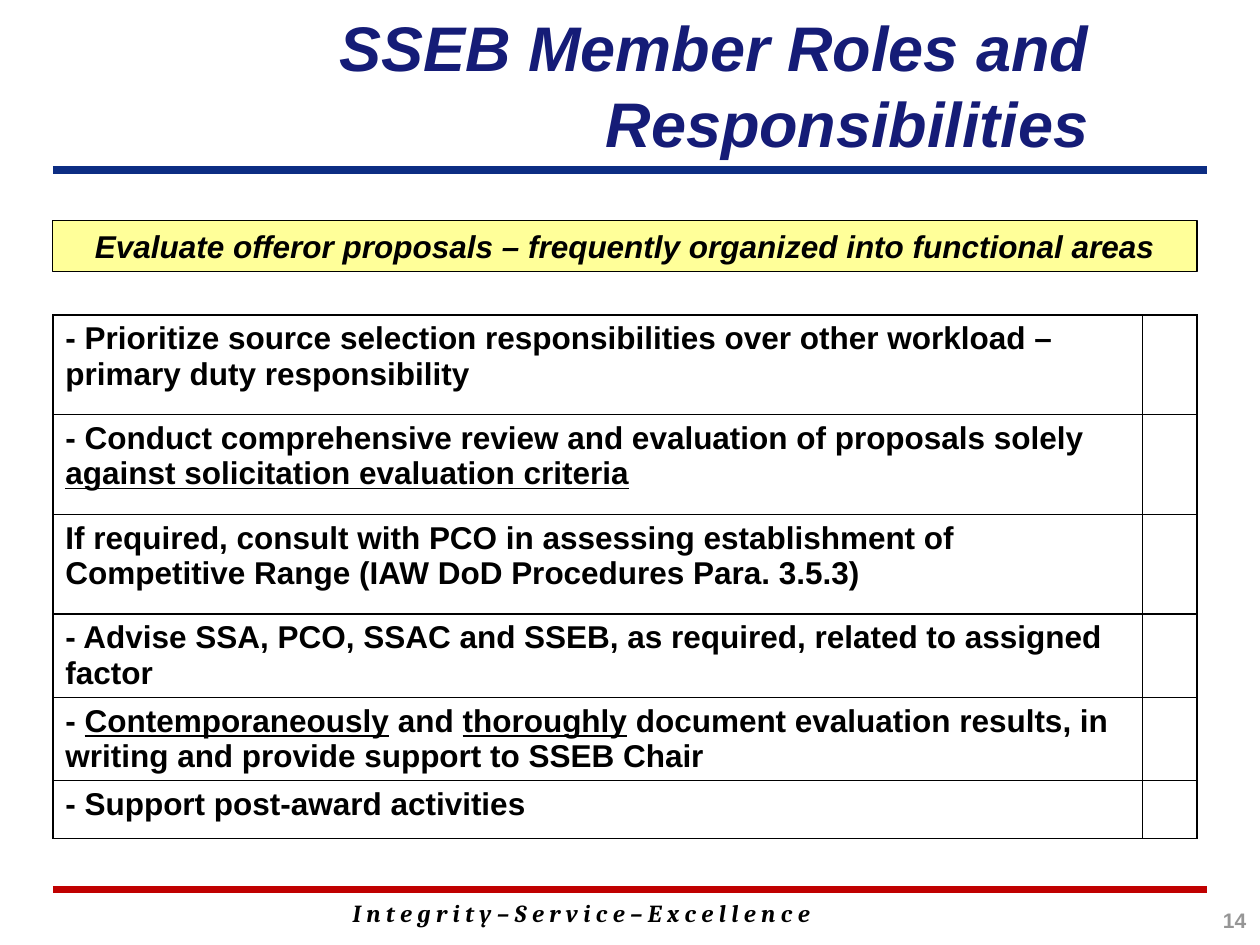
from lxml.etree import SubElement
from pptx import Presentation
from pptx.dml.color import RGBColor as RGB
from pptx.enum.shapes import MSO_CONNECTOR as CONN, MSO_SHAPE as SHAPE
from pptx.enum.text import MSO_ANCHOR as ANCHOR, MSO_AUTO_SIZE as FIT, PP_ALIGN as ALIGN
from pptx.oxml.ns import qn
from pptx.util import Pt

C = {"navy": "151C77", "blue": "0C2D83", "red": "C00000",
     "yellow": "FFFF99", "black": "000000", "gray": "969696"}
TITLE = "SSEB Member Roles and Responsibilities"
BANNER = "Evaluate offeror proposals – frequently organized into functional areas"
MOTTO = "I n t e g r i t y – S e r v i c e – E x c e l l e n c e"
NUMBER = "14"
DUTIES = [
    (57, ["- Prioritize source selection responsibilities over other workload – "
          "primary duty responsibility"]),
    (57, ["- Conduct comprehensive review and evaluation of proposals solely ",
          "against solicitation evaluation criteria"]),
    (57, ["If required, consult with PCO in assessing establishment of "
          "Competitive Range (IAW DoD Procedures Para. 3.5.3)"]),
    (33, ["- Advise SSA, PCO, SSAC and SSEB, as required, related to assigned factor"]),
    (33, ["- ", "Contemporaneously", " and ", "thoroughly",
          " document evaluation results, in writing and provide support to SSEB Chair"]),
    (33, ["- Support post-award activities"]),
]
RULES = [(97.2, "blue"), (508.3, "red")]
LEFT, RIGHT, WIDTH = 30.2, 689.8, 653.8
COLUMNS = [622.8, 31]
FORMATS = {
    "title": {"size": Pt(36), "name": "Arial", "bold": True, "italic": True},
    "banner": {"size": Pt(18), "name": "Arial", "bold": True, "italic": True},
    "duty": {"size": Pt(18), "name": "Arial", "bold": True},
    "motto": {"size": Pt(14), "name": "Cambria", "bold": True, "italic": True},
    "number": {"size": Pt(12), "name": "Arial", "bold": True},
}


def style(font, kind, color="black"):
    for key, value in FORMATS[kind].items():
        setattr(font, key, value)
    font.color.rgb = RGB.from_string(C[color])


def write(s, text, kind, color, align, anchor=ANCHOR.TOP):
    tf = s.text_frame
    tf.word_wrap, tf.auto_size, tf.vertical_anchor = True, FIT.NONE, anchor
    p = tf.paragraphs[0]
    p.alignment = align
    r = p.add_run()
    r.text = text
    style(r.font, kind, color)


def add_rule(y, color):
    s = slide.shapes.add_connector(CONN.STRAIGHT, Pt(LEFT), Pt(y), Pt(RIGHT), Pt(y))
    s.line.color.rgb = RGB.from_string(C[color])
    s.line.width = Pt(4.5)
    SubElement(s._element.spPr, qn("a:effectLst"))


def add_borders(cell):
    tcPr = cell._tc.get_or_add_tcPr()
    for i, side in enumerate(("lnL", "lnR", "lnT", "lnB")):
        ln = tcPr.makeelement(qn(f"a:{side}"), {"w": str(Pt(1))})
        fill = SubElement(ln, qn("a:solidFill"))
        SubElement(fill, qn("a:srgbClr"), val=C["black"])
        tcPr.insert(i, ln)


def add_duties():
    height = sum(h for h, _ in DUTIES)
    table = slide.shapes.add_table(len(DUTIES), len(COLUMNS), Pt(LEFT), Pt(180),
                                   Pt(WIDTH), Pt(height)).table
    table.first_row = table.horz_banding = False
    for column, width in zip(table.columns, COLUMNS):
        column.width = Pt(width)
    for row, (height, parts) in zip(table.rows, DUTIES):
        row.height = Pt(height)
        for cell in row.cells:
            cell.fill.background()
            add_borders(cell)
        p = row.cells[0].text_frame.paragraphs[0]
        for i, part in enumerate(parts):
            r = p.add_run()
            r.text = part
            style(r.font, "duty")
            if i % 2:
                r.font.underline = True


prs = Presentation()
prs.slide_width, prs.slide_height = Pt(720), Pt(540)
slide = prs.slides.add_slide(prs.slide_layouts[5])

for y, color in RULES:
    add_rule(y, color)

s = slide.shapes.title
s.left, s.top, s.width, s.height = Pt(131), Pt(5.8), Pt(498.3), Pt(85)
write(s, TITLE, "title", "navy", ALIGN.RIGHT, ANCHOR.MIDDLE)

add_duties()

s = slide.shapes.add_shape(SHAPE.RECTANGLE, Pt(LEFT), Pt(126), Pt(WIDTH), Pt(29))
s.shadow.inherit = False
s.fill.solid()
s.fill.fore_color.rgb = RGB.from_string(C["yellow"])
s.line.color.rgb = RGB.from_string(C["black"])
s.line.width = Pt(0.75)
write(s, BANNER, "banner", "black", ALIGN.CENTER, ANCHOR.MIDDLE)

s = slide.shapes.add_textbox(Pt(194.4), Pt(509.8), Pt(330.5), Pt(24.5))
write(s, MOTTO, "motto", "black", ALIGN.LEFT)

s = slide.shapes.add_textbox(Pt(629.3), Pt(514), Pt(90), Pt(23.8))
write(s, NUMBER, "number", "gray", ALIGN.RIGHT, ANCHOR.MIDDLE)

prs.save("out.pptx")
